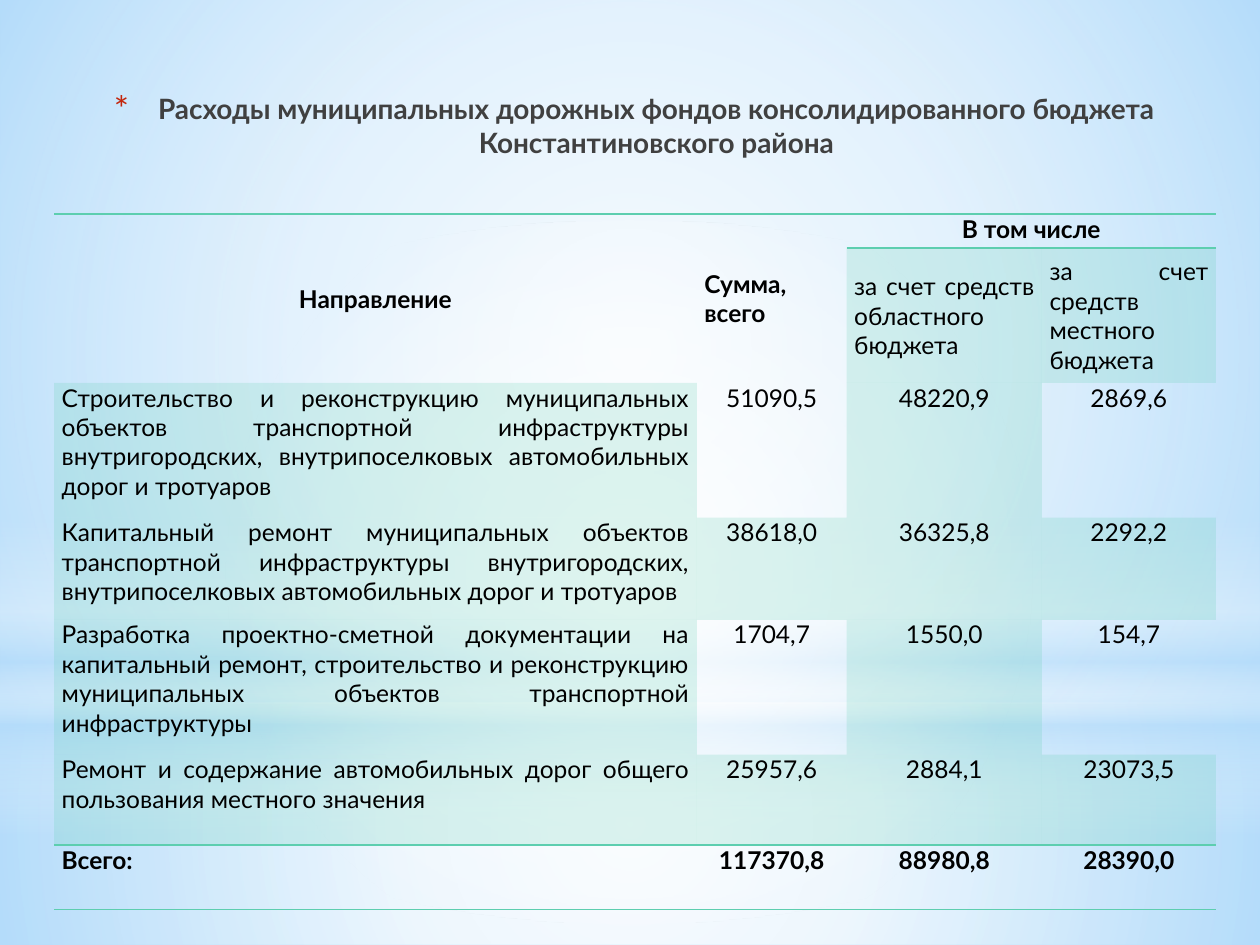
from lxml import etree
from pptx import Presentation
from pptx.dml.color import RGBColor
from pptx.enum.shapes import MSO_SHAPE
from pptx.enum.text import MSO_ANCHOR, PP_ALIGN
from pptx.oxml import parse_xml
from pptx.oxml.ns import nsdecls, qn
from pptx.util import Inches, Pt

RECT, OVAL = MSO_SHAPE.RECTANGLE, MSO_SHAPE.OVAL
TOP, MIDDLE = MSO_ANCHOR.TOP, MSO_ANCHOR.MIDDLE
CENTER, JUSTIFY = PP_ALIGN.CENTER, PP_ALIGN.JUSTIFY
SKY = RGBColor(0xB4, 0xDC, 0xFA)
WHITE = RGBColor(0xFF, 0xFF, 0xFF)
MINT = RGBColor(0x5D, 0xCE, 0xAF)
BLACK = RGBColor(0, 0, 0)
GRAY = RGBColor(0x40, 0x40, 0x40)
RED = RGBColor(0xC3, 0x26, 0x0C)
FONT = "Lato"
NO_GRID_STYLE = "{2D5ABB26-0587-4C30-8999-92F81FD0307C}"
WIDTH, HEIGHT = Inches(10), Inches(7.5)

RADIAL = '<a:path path="circle"><a:fillToRect l="50000" t="50000" r="50000" b="50000"/></a:path>'
VERTICAL = '<a:lin ang="5400000" scaled="0"/>'
GLOWS = [
    (RECT, 0.744, 0.256, RADIAL, [(0, WHITE, 91), (37, WHITE, 76), (100, SKY, 79)]),
    (RECT, 0, 0.744, RADIAL, [(0, WHITE, 89), (48, WHITE, 62), (100, SKY, 79)]),
    (RECT, 0.55, 0.333, VERTICAL, [(0, WHITE, 0), (29, WHITE, 30), (45, SKY, 40),
                                   (55, WHITE, 26), (65, SKY, 60), (100, WHITE, 0)]),
    (OVAL, 0.233, 0.744, RADIAL, [(0, WHITE, 100), (56, WHITE, 0)]),
]

TITLE = "Расходы муниципальных дорожных фондов консолидированного бюджета Константиновского района"
COLUMNS = [5.1, 1.19, 1.55, 1.38]
ROWS = [0.27, 1.07, 1.07, 0.81, 1.07, 0.72, 0.51]
MERGES = [((0, 0), (1, 0)), ((0, 1), (1, 1)), ((0, 2), (0, 3))]
EXPENSES = [
    ("Направление", "Сумма, всего", "В том числе", ""),
    ("", "", "за счет средств областного бюджета", "за счет средств местного бюджета"),
    ("Строительство и реконструкцию муниципальных объектов транспортной инфраструктуры "
     "внутригородских, внутрипоселковых автомобильных дорог и тротуаров",
     "51090,5", "48220,9", "2869,6"),
    ("Капитальный ремонт муниципальных объектов транспортной инфраструктуры "
     "внутригородских, внутрипоселковых автомобильных дорог и тротуаров",
     "38618,0", "36325,8", "2292,2"),
    ("Разработка проектно-сметной документации на капитальный ремонт, строительство "
     "и реконструкцию муниципальных объектов транспортной инфраструктуры",
     "1704,7", "1550,0", "154,7"),
    ("Ремонт и содержание автомобильных дорог общего пользования местного значения",
     "25957,6", "2884,1", "23073,5"),
    ("Всего:", "117370,8", "88980,8", "28390,0"),
]
TOTAL = len(EXPENSES) - 1


def apply(target, **values):
    for name, value in values.items():
        setattr(target, name, value)


def set_font(paragraph, size, color, bold):
    apply(paragraph.font, name=FONT, size=Pt(size), bold=bold)
    paragraph.font.color.rgb = color


def add_glow(slide, kind, top, height, direction, stops):
    glow = slide.shapes.add_shape(kind, 0, int(HEIGHT * top), WIDTH, int(HEIGHT * height))
    glow.shadow.inherit = False
    glow.line.fill.background()
    glow.fill.gradient()
    marks = "".join(
        f'<a:gs pos="{share * 1000}"><a:srgbClr val="{color}">'
        f'<a:alpha val="{alpha * 1000}"/></a:srgbClr></a:gs>'
        for share, color, alpha in stops)
    gradient = glow.element.spPr.find(qn("a:gradFill"))
    gradient.getparent().replace(gradient, parse_xml(
        f'<a:gradFill {nsdecls("a")} rotWithShape="1">'
        f'<a:gsLst>{marks}</a:gsLst>{direction}</a:gradFill>'))


def add_title(slide):
    title = slide.shapes.add_textbox(Inches(0.35), Inches(0.68), Inches(9.37), Inches(1.02))
    apply(title.text_frame, word_wrap=True, vertical_anchor=TOP)
    heading = title.text_frame.paragraphs[0]
    apply(heading, text=TITLE, alignment=CENTER)
    properties = heading._p.get_or_add_pPr()
    properties.set("marL", str(Inches(0.35)))
    properties.set("indent", str(-Inches(0.35)))
    color = etree.SubElement(properties, qn("a:buClr"))
    etree.SubElement(color, qn("a:srgbClr"), val=str(RED))
    etree.SubElement(properties, qn("a:buSzPct"), val="128000")
    etree.SubElement(properties, qn("a:buFont"), typeface=FONT)
    etree.SubElement(properties, qn("a:buChar"), char="*")
    set_font(heading, 16, GRAY, True)


def shade(cell, filled):
    if not filled:
        cell.fill.background()
        return
    cell.fill.solid()
    cell.fill.fore_color.rgb = MINT
    color = cell._tc.tcPr.find(".//" + qn("a:srgbClr"))
    etree.SubElement(color, qn("a:alpha"), val="20000")


def rule(cell, sides):
    for index, side in enumerate(sides):
        cell._tc.tcPr.insert(index, parse_xml(
            f'<a:ln{side} {nsdecls("a")} w="{Pt(1)}"><a:solidFill>'
            f'<a:srgbClr val="{MINT}"/></a:solidFill></a:ln{side}>'))


def ruled_sides(row, col):
    if row == TOTAL:
        return "TB"
    if row == 0:
        return "T" if col < 2 else "TB"
    return "B" if row == 1 and col < 2 else ""


def add_expenses(slide):
    frame = slide.shapes.add_table(len(ROWS), len(COLUMNS), Inches(0.43), Inches(1.7),
                                   Inches(sum(COLUMNS)), Inches(sum(ROWS)))
    table = frame.table
    apply(table, first_row=False, horz_banding=False)
    table._tbl.tblPr.find(qn("a:tableStyleId")).text = NO_GRID_STYLE
    for column, width in zip(table.columns, COLUMNS):
        column.width = Inches(width)
    for line, height in zip(table.rows, ROWS):
        line.height = Inches(height)
    for start, end in MERGES:
        table.cell(*start).merge(table.cell(*end))
    for row, texts in enumerate(EXPENSES):
        for col, text in enumerate(texts):
            cell = table.cell(row, col)
            centered = (row, col) == (0, 0) or col > 0 and row > 1 or row == 0 and col > 1
            spread = row == 1 or row == 0 and col < 2
            apply(cell, margin_left=Inches(0.06), margin_right=Inches(0.06),
                  margin_top=0, margin_bottom=0, vertical_anchor=MIDDLE if spread else TOP)
            entry = cell.text_frame.paragraphs[0]
            apply(entry, text=text, alignment=CENTER if centered else JUSTIFY)
            set_font(entry, 14, BLACK, row in (0, TOTAL))
            banded = 0 < row < TOTAL and (col in (0, 2) or row % 2 == 1)
            shade(cell, banded and not cell.is_spanned)
            rule(cell, ruled_sides(row, col))


def main():
    deck = Presentation()
    apply(deck, slide_width=WIDTH, slide_height=HEIGHT)
    slide = deck.slides.add_slide(deck.slide_layouts[6])
    slide.background.fill.solid()
    slide.background.fill.fore_color.rgb = SKY
    for glow in GLOWS:
        add_glow(slide, *glow)
    add_title(slide)
    add_expenses(slide)
    deck.save("out.pptx")


if __name__ == "__main__":
    main()
